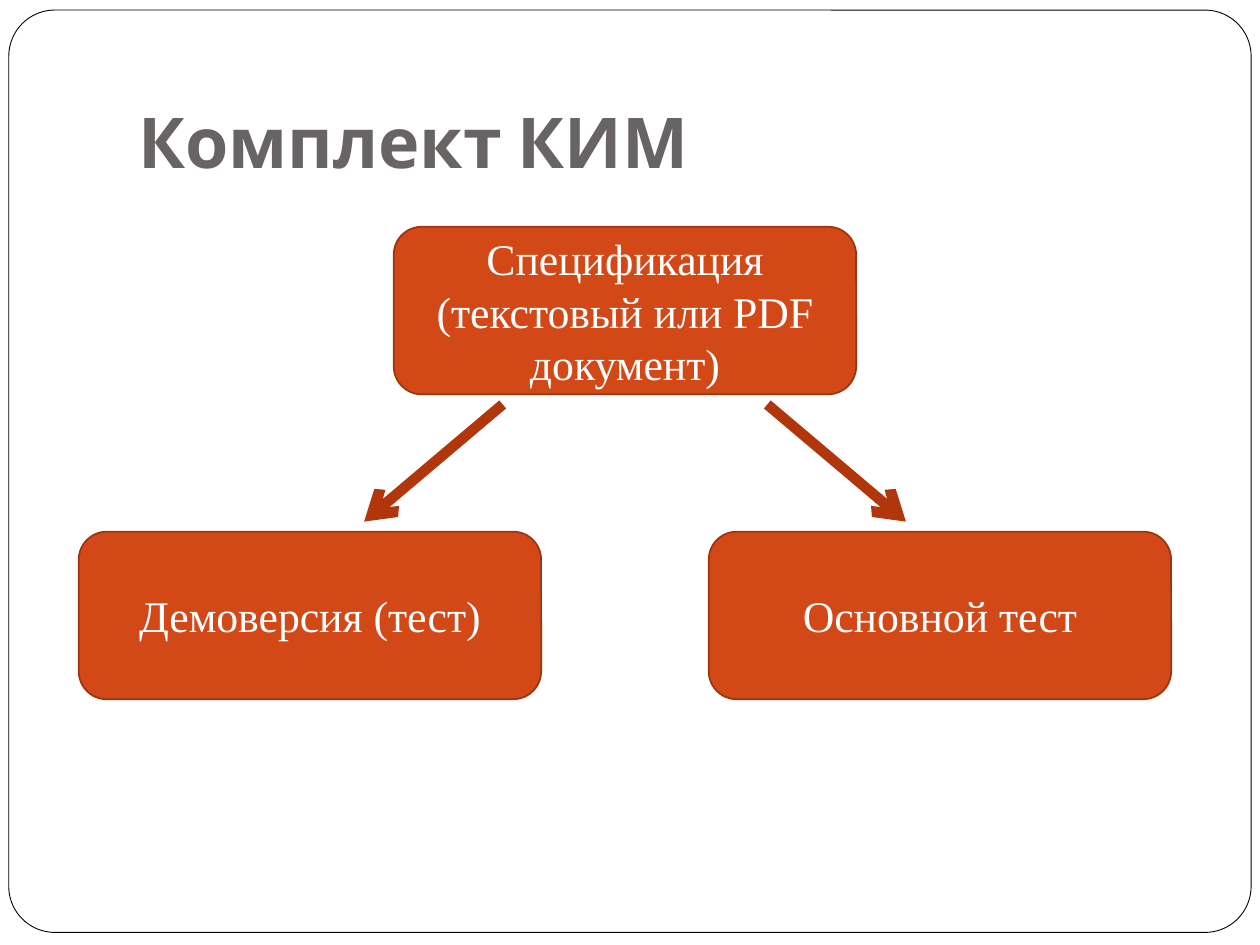
from dataclasses import dataclass

from lxml.etree import SubElement
from pptx import Presentation
from pptx.dml.color import RGBColor
from pptx.enum.shapes import MSO_CONNECTOR, MSO_SHAPE
from pptx.enum.text import MSO_ANCHOR, MSO_AUTO_SIZE, PP_ALIGN
from pptx.oxml.ns import qn
from pptx.util import Inches, Pt


@dataclass
class Theme:
    paper: RGBColor = RGBColor.from_string("FFFFFF")
    ink: RGBColor = RGBColor.from_string("000000")
    title: RGBColor = RGBColor.from_string("696464")
    box: RGBColor = RGBColor.from_string("D34817")
    edge: RGBColor = RGBColor.from_string("9C3511")
    arrow: RGBColor = RGBColor.from_string("B1360B")
    title_font: str = "Cabin"
    body_font: str = "Times New Roman"
    title_size: Pt = Pt(40)
    body_size: Pt = Pt(25)


def add_box(s, x, y, w, h, fill, line, weight):
    sp = s.shapes.add_shape(MSO_SHAPE.ROUNDED_RECTANGLE, x, y, w, h)
    sp.shadow.inherit = False
    sp.fill.solid()
    sp.fill.fore_color.rgb = fill
    sp.line.color.rgb = line
    sp.line.width = Pt(weight)
    return sp


def set_text(tf, text, align, anchor, font, size, color, bold):
    tf.text = text
    tf.word_wrap = True
    tf.auto_size = MSO_AUTO_SIZE.NONE
    tf.vertical_anchor = anchor
    p = tf.paragraphs[0]
    p.alignment = align
    r = p.runs[0]
    r.font.name = font
    r.font.size = size
    r.font.color.rgb = color
    r.font.bold = bold


theme = Theme()
prs = Presentation()
prs.slide_width, prs.slide_height = Inches(10), Inches(7.5)
s = prs.slides.add_slide(prs.slide_layouts[5])
s.background.fill.solid()
s.background.fill.fore_color.rgb = theme.paper
col = prs.slide_width / 16

frame = add_box(s, Inches(0.07), Inches(0.08), Inches(9.86), Inches(7.32),
                theme.paper, theme.ink, 0.5)
frame.adjustments[0] = 0.05
s.shapes._spTree.insert(2, frame._element)

title = s.shapes.title
title.left, title.top = Inches(1), Inches(0.3)
title.width, title.height = Inches(8.5), Inches(1.25)
title.text_frame.margin_bottom = Inches(0.1)
set_text(title.text_frame, "Комплект КИМ", PP_ALIGN.LEFT, MSO_ANCHOR.BOTTOM,
         theme.title_font, theme.title_size, theme.title, True)

box_w, box_h = Inches(3.67), Inches(1.33)
top_row, bottom_row = Inches(1.8), Inches(4.22)
boxes = [
    (5, top_row, "Спецификация (текстовый или PDF документ)"),
    (1, bottom_row, "Демоверсия (тест)"),
    (9, bottom_row, "Основной тест"),
]
for n, y, text in boxes:
    sp = add_box(s, int(n * col), y, box_w, box_h, theme.box, theme.edge, 1)
    set_text(sp.text_frame, text, PP_ALIGN.CENTER, MSO_ANCHOR.MIDDLE,
             theme.body_font, theme.body_size, theme.paper, False)

gap = Inches(0.08)
arrow_top, arrow_bottom = top_row + box_h + gap, bottom_row - gap
arrow_center = Inches(5.04)
for side in (-1, 1):
    ln = s.shapes.add_connector(
        MSO_CONNECTOR.STRAIGHT,
        arrow_center + side * Inches(1.05), arrow_top,
        arrow_center + side * Inches(2.15), arrow_bottom)
    ln.line.color.rgb = theme.arrow
    ln.line.width = Pt(6)
    SubElement(ln.line._get_or_add_ln(), qn("a:tailEnd"), type="arrow")
    SubElement(ln._element.spPr, qn("a:effectLst"))

prs.save("out.pptx")
